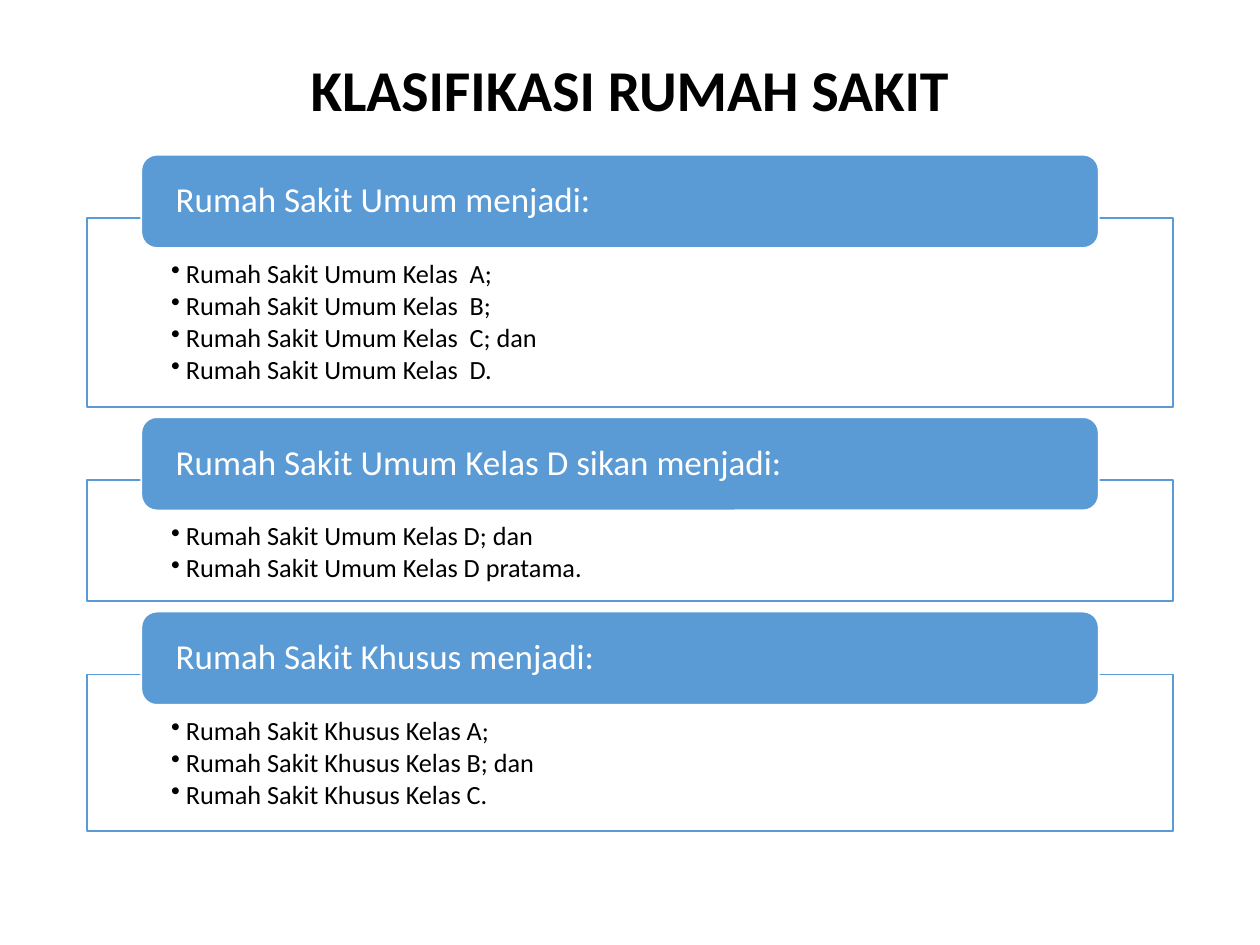
from dataclasses import dataclass

import pptx
import pptx.dml.color
import pptx.enum.shapes
import pptx.enum.text
import pptx.oxml
import pptx.oxml.ns
import pptx.util

Cm = pptx.util.Cm
Pt = pptx.util.Pt
SHAPES = pptx.enum.shapes.MSO_SHAPE
ANCHOR = pptx.enum.text.MSO_ANCHOR
ALIGN = pptx.enum.text.PP_ALIGN

BLUE, WHITE, BLACK = "5B9BD5", "FFFFFF", "000000"
FIRST_TOP, GAP = 3.12, 0.21
HEADER_HEIGHT, BODY_DROP = 1.88, 1.27
BODY_LEFT, BODY_WIDTH = 1.75, 21.9
HEADER_LEFT, HEADER_WIDTH = 2.85, 19.3
BULLET_INDENT = 0.3


@dataclass
class Section:
    heading: str
    items: list[str]
    body_height: float


SECTIONS = [
    Section("Rumah Sakit Umum menjadi:",
            ["Rumah Sakit Umum Kelas  A;", "Rumah Sakit Umum Kelas  B;",
             "Rumah Sakit Umum Kelas  C; dan", "Rumah Sakit Umum Kelas  D."], 3.81),
    Section("Rumah Sakit Umum Kelas D sikan menjadi:",
            ["Rumah Sakit Umum Kelas D; dan", "Rumah Sakit Umum Kelas D pratama."], 2.44),
    Section("Rumah Sakit Khusus menjadi:",
            ["Rumah Sakit Khusus Kelas A;", "Rumah Sakit Khusus Kelas B; dan",
             "Rumah Sakit Khusus Kelas C."], 3.15),
]


def color(value: str) -> pptx.dml.color.RGBColor:
    return pptx.dml.color.RGBColor.from_string(value)


def add_box(page, kind, left: float, top: float, width: float, height: float,
            fill: str, line: str):
    box = page.shapes.add_shape(kind, Cm(left), Cm(top), Cm(width), Cm(height))
    box.shadow.inherit = False
    box.fill.solid()
    box.fill.fore_color.rgb = color(fill)
    box.line.color.rgb = color(line)
    box.line.width = Pt(1)
    box.text_frame.word_wrap = True
    return box


def set_margins(frame, left: float, top: float, right: float, bottom: float) -> None:
    frame.margin_left, frame.margin_top = Cm(left), Cm(top)
    frame.margin_right, frame.margin_bottom = Cm(right), Cm(bottom)


def format_paragraph(paragraph, size: float, text_color: str, align=ALIGN.LEFT,
                     bold: bool = False) -> None:
    paragraph.alignment = align
    paragraph.line_spacing = 0.9
    for span in paragraph.runs:
        span.font.name = "Calibri"
        span.font.size = Pt(size)
        span.font.bold = bold
        span.font.color.rgb = color(text_color)


def add_bullet(paragraph) -> None:
    properties = paragraph._p.get_or_add_pPr()
    properties.set("marL", str(Cm(BULLET_INDENT)))
    properties.set("indent", str(-Cm(BULLET_INDENT)))
    bullet = pptx.oxml.parse_xml(
        f'<a:buChar {pptx.oxml.ns.nsdecls("a")} char="•"/>')
    properties.append(bullet)


def add_section(page, section: Section, top: float) -> float:
    """Draw one section and return the bottom of its body."""
    body_top = top + BODY_DROP
    body = add_box(page, SHAPES.RECTANGLE, BODY_LEFT, body_top, BODY_WIDTH,
                   section.body_height, WHITE, BLUE)
    frame = body.text_frame
    frame.vertical_anchor = ANCHOR.TOP
    set_margins(frame, 1.7, 0.87, 1.7, 0.3)
    frame.text = "\n".join(section.items)
    for paragraph in frame.paragraphs:
        add_bullet(paragraph)
        paragraph.level = 1
        paragraph.space_after = Pt(2)
        format_paragraph(paragraph, 15, BLACK)

    header = add_box(page, SHAPES.ROUNDED_RECTANGLE, HEADER_LEFT, top, HEADER_WIDTH,
                     HEADER_HEIGHT, BLUE, WHITE)
    frame = header.text_frame
    frame.vertical_anchor = ANCHOR.MIDDLE
    set_margins(frame, 0.6, 0, 0.6, 0)
    frame.text = section.heading
    format_paragraph(frame.paragraphs[0], 20, WHITE)
    return body_top + section.body_height


def add_title(page, text: str) -> None:
    title = page.shapes.title
    title.left, title.top = Cm(BODY_LEFT), Cm(1.02)
    title.width, title.height = Cm(BODY_WIDTH), Cm(1.7)
    title.text_frame.text = text
    title.text_frame.vertical_anchor = ANCHOR.MIDDLE
    format_paragraph(title.text_frame.paragraphs[0], 33, BLACK, ALIGN.CENTER, bold=True)


def main() -> None:
    deck = pptx.Presentation()
    deck.slide_width, deck.slide_height = Cm(25.4), Cm(19.05)
    page = deck.slides.add_slide(deck.slide_layouts.get_by_name("Title Only"))
    add_title(page, "KLASIFIKASI RUMAH SAKIT")
    top = FIRST_TOP
    for section in SECTIONS:
        top = add_section(page, section, top) + GAP
    deck.save("out.pptx")


if __name__ == "__main__":
    main()
